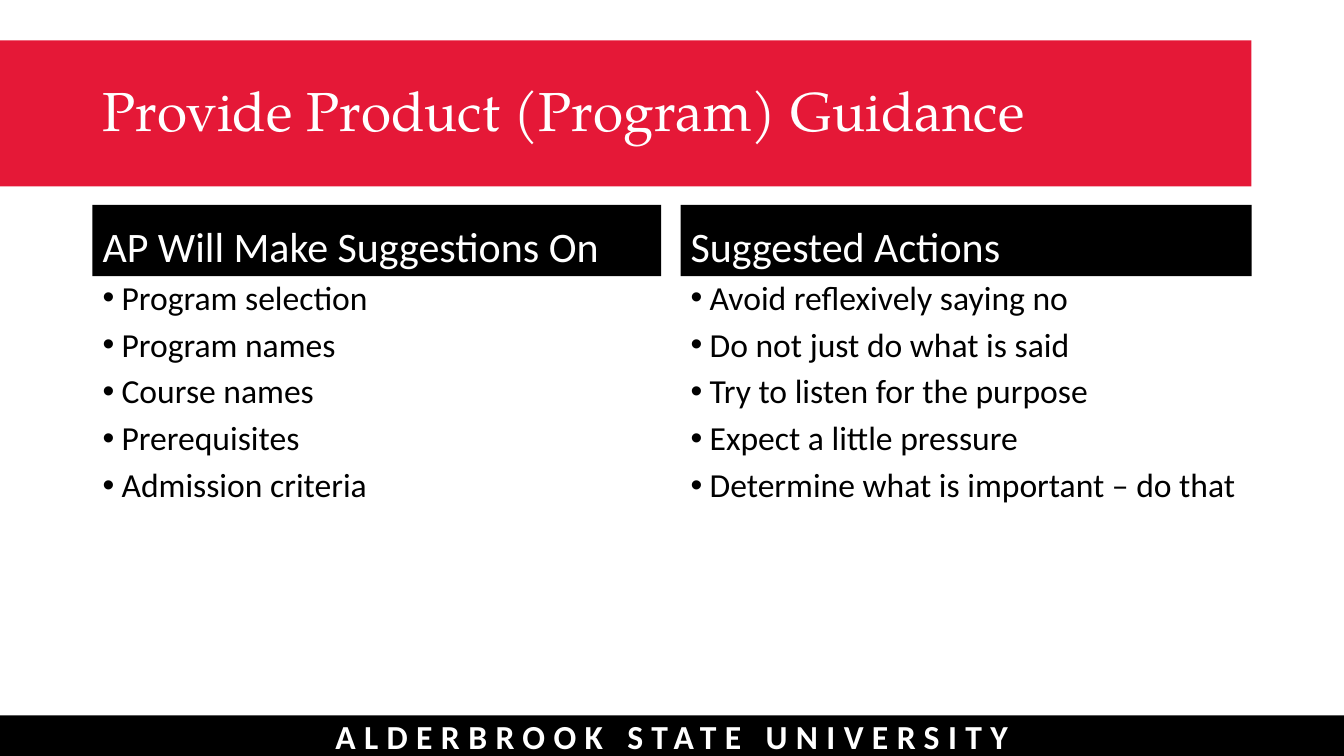
import lxml.etree
import pptx
import pptx.dml.color
import pptx.enum.shapes
import pptx.enum.text
import pptx.oxml.ns
import pptx.util
from pptx.util import Cm

COLORS = {"red": "E51837", "black": "000000", "white": "FFFFFF"}
ANCHOR = pptx.enum.text.MSO_ANCHOR
ALIGN = pptx.enum.text.PP_ALIGN
LEFT, RIGHT = Cm(2.33), Cm(31.54)
BANNER_TOP, BANNER_HEIGHT = Cm(1.02), Cm(3.68)
HEADING_TOP, HEADING_HEIGHT = Cm(5.16), Cm(1.8)
LIST_HEIGHT = Cm(10.24)
COLUMNS = [
    (LEFT, Cm(14.33), "AP Will Make Suggestions On",
     ["Program selection", "Program names", "Course names", "Prerequisites",
      "Admission criteria"]),
    (Cm(17.15), RIGHT - Cm(17.15), "Suggested Actions",
     ["Avoid reflexively saying no", "Do not just do what is said",
      "Try to listen for the purpose", "Expect a little pressure",
      "Determine what is important – do that"]),
]


def rgb(name):
    """Return the named colour."""
    return pptx.dml.color.RGBColor.from_string(COLORS[name])


def fill(sp, color):
    """Fill a shape with a named colour."""
    sp.fill.solid()
    sp.fill.fore_color.rgb = rgb(color)


def set_text(sp, lines, size, color, font="Calibri", anchor=ANCHOR.TOP,
             align=ALIGN.LEFT, bold=False, before=0, spacing=0.9):
    """Write the lines as paragraphs and format them."""
    tf = sp.text_frame
    tf.text = "\n".join(lines)
    tf.word_wrap = True
    tf.auto_size = pptx.enum.text.MSO_AUTO_SIZE.NONE
    tf.vertical_anchor = anchor
    for p in tf.paragraphs:
        p.alignment = align
        p.line_spacing = spacing
        p.space_before = pptx.util.Pt(before)
        p.space_after = pptx.util.Pt(0)
        for r in p.runs:
            r.font.size = pptx.util.Pt(size)
            r.font.name = font
            r.font.bold = bold
            r.font.color.rgb = rgb(color)


def place(sp, left, top, width, height):
    """Move and size a placeholder."""
    sp.left, sp.top, sp.width, sp.height = left, top, width, height


def add_bar(s, left, top, width, height, color):
    """Add a plain bar behind the other shapes."""
    sp = s.shapes.add_shape(pptx.enum.shapes.MSO_SHAPE.RECTANGLE,
                            left, top, width, height)
    fill(sp, color)
    sp.line.fill.background()
    sp.shadow.inherit = False
    sp.element.getparent().insert(2, sp.element)
    return sp


def add_bullets(sp):
    """Give every paragraph a hanging round bullet."""
    qn = pptx.oxml.ns.qn
    for pPr in sp.element.iter(qn("a:pPr")):
        pPr.set("marL", str(Cm(0.48)))
        pPr.set("indent", str(-Cm(0.48)))
        lxml.etree.SubElement(pPr, qn("a:buFont"), typeface="Arial")
        lxml.etree.SubElement(pPr, qn("a:buChar"), char="•")


def fill_column(heading, body, left, width, title, items):
    """Fill one heading placeholder and the list below it."""
    place(heading, left, HEADING_TOP, width, HEADING_HEIGHT)
    fill(heading, "black")
    set_text(heading, [title], 30, "white", anchor=ANCHOR.BOTTOM, before=7.5)
    place(body, left, HEADING_TOP + HEADING_HEIGHT, width, LIST_HEIGHT)
    set_text(body, items, 24, "black", before=7.5)
    add_bullets(body)


def add_footer(s, width, height):
    """Add the footer bar with its widely spaced name."""
    bar_height = Cm(1.02)
    sp = add_bar(s, 0, height - bar_height, width, bar_height, "black")
    set_text(sp, ["ALDERBROOK STATE UNIVERSITY"], 24, "white", bold=True,
             anchor=ANCHOR.MIDDLE, align=ALIGN.CENTER, spacing=1.0)
    for rPr in sp.element.iter(pptx.oxml.ns.qn("a:rPr")):
        rPr.set("spc", "600")


def main():
    """Build the slide and save it."""
    prs = pptx.Presentation()
    prs.slide_width, prs.slide_height = Cm(33.87), Cm(19.05)
    s = prs.slides.add_slide(prs.slide_layouts.get_by_name("Comparison"))
    title, *bodies = s.placeholders
    add_footer(s, prs.slide_width, prs.slide_height)
    add_bar(s, 0, BANNER_TOP, RIGHT, BANNER_HEIGHT, "red")
    place(title, LEFT, BANNER_TOP, RIGHT - LEFT, BANNER_HEIGHT)
    set_text(title, ["Provide Product (Program) Guidance"], 39.2, "white",
             font="TeX Gyre Pagella", anchor=ANCHOR.MIDDLE)
    for heading, body, column in zip(bodies[::2], bodies[1::2], COLUMNS):
        fill_column(heading, body, *column)
    prs.save("out.pptx")


if __name__ == "__main__":
    main()
